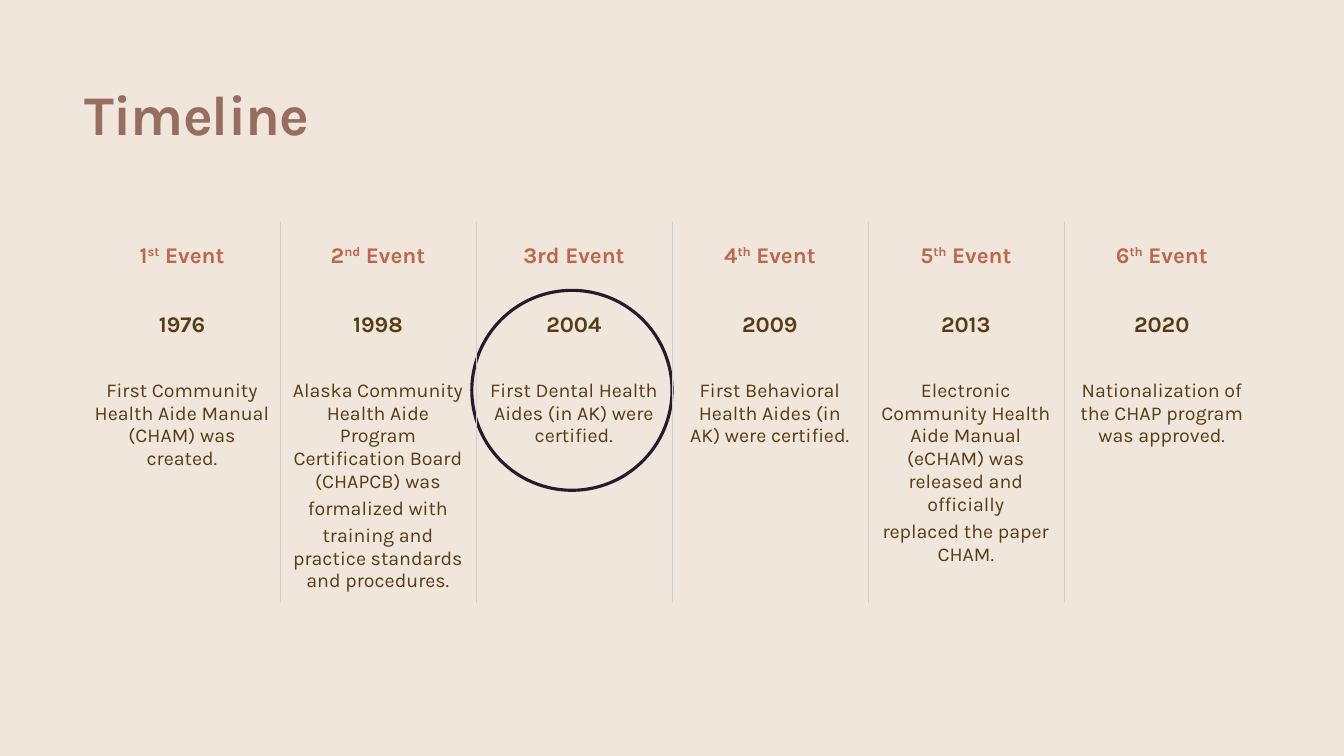
from dataclasses import dataclass

from lxml import etree
from pptx import Presentation
from pptx.dml.color import RGBColor
from pptx.enum import shapes, text
from pptx.oxml.ns import qn
from pptx.util import Pt

COLOURS = {
    "background": "F0E6DC",
    "title": "976D5F",
    "event": "BB674B",
    "body": "563B14",
    "divider": "CFCFCF",
    "ring": "261A2D",
}
FONT = "Karla"
NO_STYLE = "{2D5ABB26-0587-4C30-8999-92F81FD0307C}"
COLUMN_WIDTH = 140
ROW_HEIGHTS = (49, 49, 174.5)
EVENT_FORMAT = {"name": FONT, "size": Pt(16), "bold": True}
DETAIL_FORMAT = {"name": FONT, "size": Pt(14), "bold": False}
TITLE_FORMAT = {"name": FONT, "size": Pt(40), "bold": True}


@dataclass
class Milestone:
    number: str
    suffix: str
    year: str
    details: tuple[str, ...]


MILESTONES = (
    Milestone("1", "st", "1976", (
        "First Community Health Aide Manual (CHAM) was created.",)),
    Milestone("2", "nd", "1998", (
        "Alaska Community Health Aide Program Certification Board (CHAPCB) was",
        "formalized with",
        "training and practice standards and procedures.")),
    Milestone("3rd", "", "2004", (
        "First Dental Health Aides (in AK) were certified.",)),
    Milestone("4", "th", "2009", (
        "First Behavioral Health Aides (in AK) were certified.",)),
    Milestone("5", "th", "2013", (
        "Electronic Community Health Aide Manual (eCHAM) was released and officially",
        "replaced the paper CHAM.")),
    Milestone("6", "th", "2020", (
        "Nationalization of the CHAP program was approved.",)),
)


def rgb(part: str) -> RGBColor:
    return RGBColor.from_string(COLOURS[part])


def format_font(font, values: dict, part: str) -> None:
    for name, value in values.items():
        setattr(font, name, value)
    font.color.rgb = rgb(part)


def add_run(paragraph, words: str, values: dict, part: str, raised: bool = False) -> None:
    run = paragraph.add_run()
    run.text = words
    format_font(run.font, values, part)
    if raised:
        run.font._element.set("baseline", "30000")


def add_divider(cell, side: str) -> None:
    """Draw a thin border on one side of a cell, side being lnL or lnR."""
    line = etree.Element(qn(f"a:{side}"), w=str(Pt(0.5)))
    fill = etree.SubElement(line, qn("a:solidFill"))
    etree.SubElement(fill, qn("a:srgbClr"), val=COLOURS["divider"])
    cell._tc.get_or_add_tcPr().insert(0, line)


def fill_column(cells: list, milestone: Milestone) -> None:
    event, year, detail = cells
    heading = event.text_frame.paragraphs[0]
    add_run(heading, milestone.number, EVENT_FORMAT, "event")
    if milestone.suffix:
        add_run(heading, milestone.suffix, EVENT_FORMAT, "event", raised=True)
    add_run(heading, " Event", EVENT_FORMAT, "event")
    add_run(year.text_frame.paragraphs[0], milestone.year, EVENT_FORMAT, "body")

    detail.margin_top = Pt(14.4)
    for index, words in enumerate(milestone.details):
        frame = detail.text_frame
        paragraph = frame.add_paragraph() if index else frame.paragraphs[0]
        if index:
            paragraph.space_before = Pt(2.8)
        add_run(paragraph, words, DETAIL_FORMAT, "body")

    for cell in cells:
        cell.fill.background()
        for paragraph in cell.text_frame.paragraphs:
            paragraph.alignment = text.PP_ALIGN.CENTER
    for cell in (event, year):
        cell.vertical_anchor = text.MSO_ANCHOR.MIDDLE


def add_title(slide) -> None:
    title = slide.shapes.title
    title.left, title.top, title.width, title.height = Pt(60), Pt(56), Pt(840), Pt(48.5)
    frame = title.text_frame
    frame_format = {"margin_left": 0, "margin_top": 0, "margin_right": 0, "margin_bottom": 0,
                    "vertical_anchor": text.MSO_ANCHOR.BOTTOM, "word_wrap": True,
                    "auto_size": text.MSO_AUTO_SIZE.NONE}
    for name, value in frame_format.items():
        setattr(frame, name, value)
    paragraph = frame.paragraphs[0]
    paragraph.alignment = text.PP_ALIGN.LEFT
    add_run(paragraph, "Timeline", TITLE_FORMAT, "title")
    paragraph.runs[0].font._element.set("spc", "-50")


def add_ring(slide) -> None:
    ring = slide.shapes.add_shape(shapes.MSO_SHAPE.OVAL, Pt(337), Pt(207.4), Pt(143), Pt(142.8))
    ring.shadow.inherit = False
    ring.fill.solid()
    ring.fill.fore_color.rgb = rgb("background")
    ring.line.color.rgb = rgb("ring")
    ring.line.width = Pt(2.25)


def add_timeline(slide) -> None:
    count = len(MILESTONES)
    timeline = slide.shapes.add_table(
        len(ROW_HEIGHTS), count, Pt(60), Pt(158.5),
        Pt(COLUMN_WIDTH * count), Pt(sum(ROW_HEIGHTS))).table
    timeline.first_row = timeline.horz_banding = False
    timeline._tbl.tblPr.find(qn("a:tableStyleId")).text = NO_STYLE
    for row, height in zip(timeline.rows, ROW_HEIGHTS):
        row.height = Pt(height)
    for index, milestone in enumerate(MILESTONES):
        timeline.columns[index].width = Pt(COLUMN_WIDTH)
        cells = [timeline.cell(row, index) for row in range(len(ROW_HEIGHTS))]
        fill_column(cells, milestone)
        for cell in cells:
            if index < count - 1:
                add_divider(cell, "lnR")
            if index:
                add_divider(cell, "lnL")


def main() -> None:
    deck = Presentation()
    deck.slide_width, deck.slide_height = Pt(960), Pt(540)
    slide = deck.slides.add_slide(deck.slide_layouts[5])
    slide.background.fill.solid()
    slide.background.fill.fore_color.rgb = rgb("background")
    add_ring(slide)
    add_title(slide)
    add_timeline(slide)
    deck.save("out.pptx")


if __name__ == "__main__":
    main()
